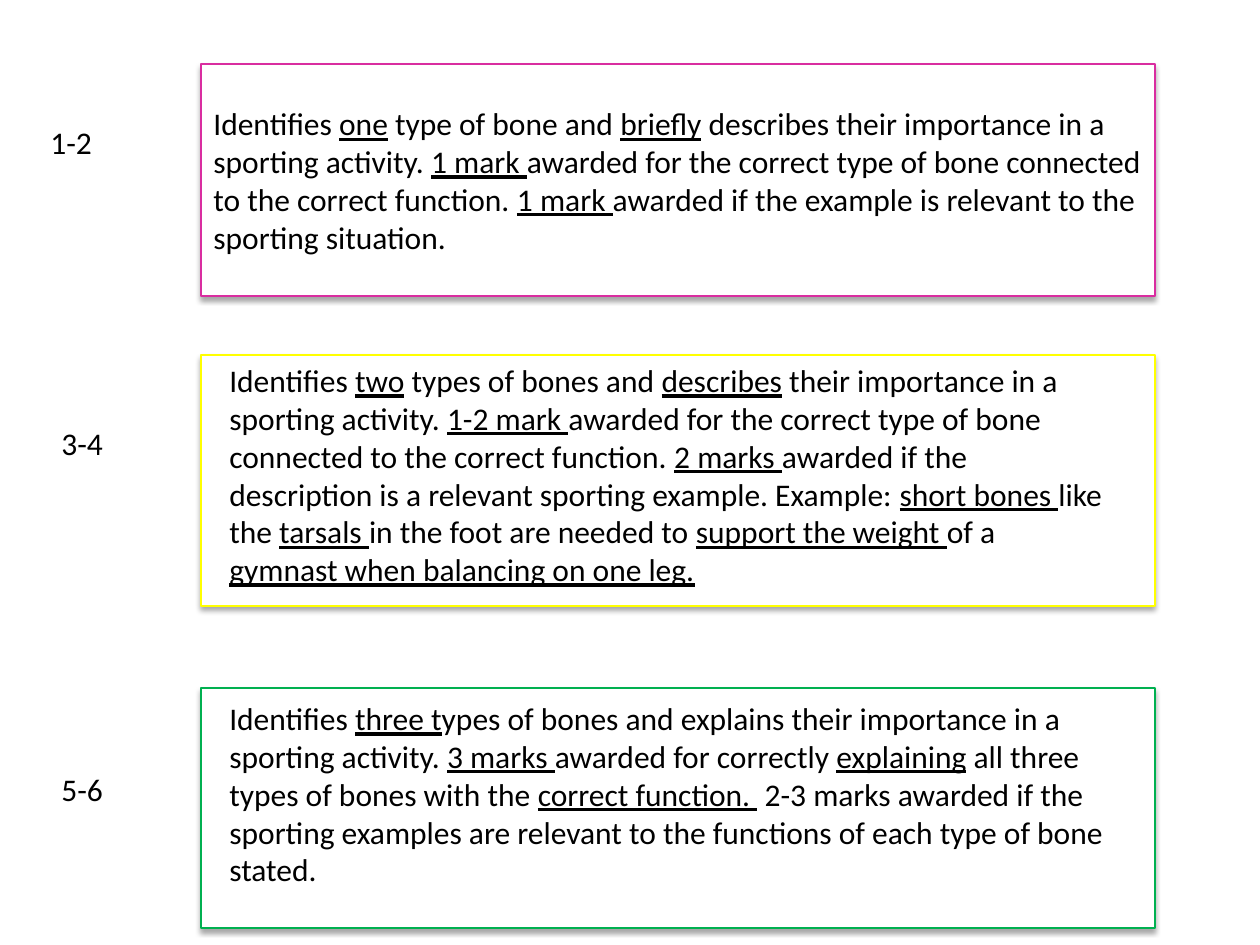
import pptx
import pptx.dml.color
import pptx.enum.shapes
import pptx.enum.text
import pptx.oxml
import pptx.oxml.ns
import pptx.util

PX = pptx.util.Inches(1) / 126
WHITE, BLACK = "FFFFFF", "000000"
BOX_LEFT, BOX_WIDTH = 201, 954
TEXT_LEFT, TEXT_WIDTH = 217, 905


def px(length):
    return pptx.util.Emu(round(length * PX))


def color(value):
    return pptx.dml.color.RGBColor.from_string(value)


class MarkSchemeSlide:
    font_format = {"name": "Calibri", "size": pptx.util.Pt(18)}
    frame_format = {"word_wrap": True}

    def __init__(self, presentation):
        self.slide = presentation.slides.add_slide(presentation.slide_layouts[6])

    def fill_text(self, shape, text, space_before=0, **frame_format):
        """Fill the shape with text; parts between underscores are underlined."""
        frame = shape.text_frame
        for name, value in {**self.frame_format, **frame_format}.items():
            setattr(frame, name, value)
        paragraph = frame.paragraphs[0]
        paragraph.alignment = pptx.enum.text.PP_ALIGN.LEFT
        paragraph.space_before = pptx.util.Pt(space_before)
        for index, part in enumerate(text.split("_")):
            if not part:
                continue
            run = paragraph.add_run()
            run.text = part
            for name, value in self.font_format.items():
                setattr(run.font, name, value)
            run.font.underline = index % 2 == 1
            run.font.color.rgb = color(BLACK)

    def box(self, top, height, outline):
        shape = self.slide.shapes.add_shape(
            pptx.enum.shapes.MSO_SHAPE.RECTANGLE,
            px(BOX_LEFT), px(top), px(BOX_WIDTH), px(height))
        shape.fill.solid()
        shape.fill.fore_color.rgb = color(WHITE)
        shape.line.color.rgb = color(outline)
        shape.line.width = pptx.util.Pt(0.75)
        self.add_shadow(shape)
        return shape

    def add_shadow(self, shape):
        """Give the shape a soft shadow straight below it."""
        shape.shadow.inherit = False
        effects = shape.element.spPr.find(pptx.oxml.ns.qn("a:effectLst"))
        effects.append(pptx.oxml.parse_xml(
            f'<a:outerShdw {pptx.oxml.ns.nsdecls("a")} blurRad="{pptx.util.Pt(3.1)}" '
            f'dist="{pptx.util.Pt(1.8)}" dir="5400000" rotWithShape="0">'
            f'<a:srgbClr val="{BLACK}"><a:alpha val="35000"/></a:srgbClr></a:outerShdw>'))

    def text(self, left, top, width, height, text, space_before=0):
        shape = self.slide.shapes.add_textbox(px(left), px(top), px(width), px(height))
        self.fill_text(shape, text, space_before,
                       auto_size=pptx.enum.text.MSO_AUTO_SIZE.SHAPE_TO_FIT_TEXT)


def main():
    presentation = pptx.Presentation()
    presentation.slide_width = pptx.util.Inches(10)
    presentation.slide_height = pptx.util.Inches(7.5)
    scheme = MarkSchemeSlide(presentation)

    low_box = scheme.box(64, 232, "D92DA0")
    scheme.fill_text(
        low_box,
        "Identifies _one_ type of bone and _briefly_ describes their importance in a "
        "sporting activity. _1 mark _awarded for the correct type of bone connected to "
        "the correct function. _1 mark _awarded if the example is relevant to the "
        "sporting situation.",
        space_before=3.6, vertical_anchor=pptx.enum.text.MSO_ANCHOR.MIDDLE)
    scheme.box(355, 251, "FFFF00")
    scheme.box(688, 240, "00B050")

    scheme.text(
        TEXT_LEFT, 355, TEXT_WIDTH, 280,
        "Identifies _two_ types of bones and _describes_ their importance in a sporting "
        "activity. _1-2 mark _awarded for the correct type of bone connected to the "
        "correct function. _2 marks _awarded if the description is a relevant sporting "
        "example. Example: _short bones _like the _tarsals _in the foot are needed to "
        "_support the weight _of a _gymnast when balancing on one leg._",
        space_before=3.6)
    scheme.text(
        TEXT_LEFT, 693, TEXT_WIDTH, 204,
        "Identifies _three t_ypes of bones and explains their importance in a sporting "
        "activity. _3 marks _awarded for correctly _explaining_ all three types of bones "
        "with the _correct function. _ 2-3 marks awarded if the sporting examples are "
        "relevant to the functions of each type of bone stated.")

    for marks, left, top, width in (
            ("1-2", 38, 117, 126), ("3-4", 49, 418, 98), ("5-6", 49, 764, 98)):
        scheme.text(left, top, width, 50, marks)

    presentation.save("out.pptx")


if __name__ == "__main__":
    main()
